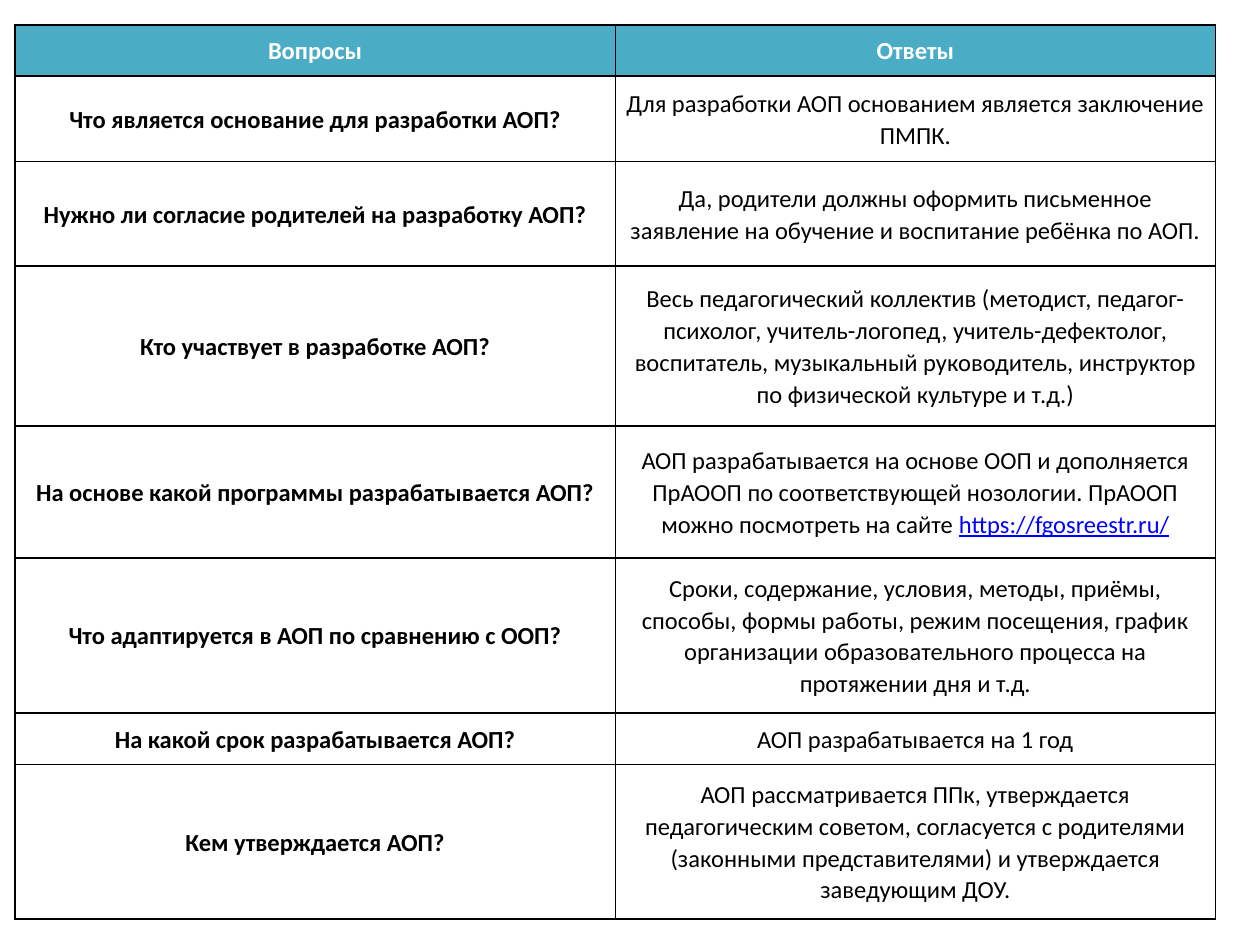
from lxml import etree
from pptx import Presentation
from pptx.dml.color import RGBColor
from pptx.enum import text
from pptx.oxml import ns
from pptx.util import Pt

HEADER = ("Вопросы", "Ответы")
LINK = "https://fgosreestr.ru/"
QUESTIONS = [
    ("Что является основание для разработки АОП?",
     "Для разработки АОП основанием является заключение ПМПК."),
    ("Нужно ли согласие родителей на разработку АОП?",
     "Да, родители должны оформить письменное заявление на обучение и воспитание ребёнка по АОП."),
    ("Кто участвует в разработке АОП?",
     "Весь педагогический коллектив (методист, педагог-психолог, учитель-логопед, "
     "учитель-дефектолог, воспитатель, музыкальный руководитель, инструктор "
     "по физической культуре и т.д.)"),
    ("На основе какой программы разрабатывается АОП?",
     "АОП разрабатывается на основе ООП и дополняется ПрАООП по соответствующей нозологии. "
     "ПрАООП можно посмотреть на сайте ", LINK),
    ("Что адаптируется в АОП по сравнению с ООП?",
     "Сроки, содержание, условия, методы, приёмы, способы, формы работы, режим посещения, "
     "график организации образовательного процесса на протяжении дня и т.д."),
    ("На какой срок разрабатывается АОП?",
     "АОП разрабатывается на 1 год"),
    ("Кем утверждается АОП?",
     "АОП рассматривается ППк, утверждается педагогическим советом, согласуется с родителями "
     "(законными представителями) и утверждается заведующим ДОУ."),
]
ROW_HEIGHTS = [29.3, 48.9, 59.7, 91.4, 75.5, 88.4, 29.4, 88.4]
LEFT, TOP, COLUMN_WIDTH = 8.6, 14.2, 343
MARGIN = 4.5
TEAL, WHITE, BLACK, BLUE = "4BACC6", "FFFFFF", "000000", "0000FF"


def color(value):
    return RGBColor.from_string(value)


def add_borders(cell):
    tc_pr = cell._tc.get_or_add_tcPr()
    for index, side in enumerate(("lnL", "lnR", "lnT", "lnB")):
        line = etree.Element(ns.qn(f"a:{side}"), w=str(Pt(1)))
        fill = etree.SubElement(line, ns.qn("a:solidFill"))
        etree.SubElement(fill, ns.qn("a:srgbClr"), val=BLACK)
        tc_pr.insert(index, line)


def fill_cell(cell, runs, bold, ink, background):
    cell.fill.solid()
    cell.fill.fore_color.rgb = color(background)
    add_borders(cell)
    cell.margin_left = cell.margin_right = Pt(MARGIN)
    cell.margin_top = cell.margin_bottom = Pt(MARGIN)
    cell.vertical_anchor = text.MSO_ANCHOR.MIDDLE
    p = cell.text_frame.paragraphs[0]
    p.alignment = text.PP_ALIGN.CENTER
    p.line_spacing = 1.07
    for content in runs:
        r = p.add_run()
        r.text = content
        r.font.name = "Calibri"
        r.font.size = Pt(14)
        r.font.bold = bold
        r.font.underline = content == LINK
        r.font.color.rgb = color(BLUE if content == LINK else ink)


prs = Presentation()
prs.slide_width, prs.slide_height = Pt(720), Pt(540)
s = prs.slides.add_slide(prs.slide_layouts[6])
table = s.shapes.add_table(
    len(ROW_HEIGHTS), len(HEADER), Pt(LEFT), Pt(TOP),
    Pt(COLUMN_WIDTH * len(HEADER)), Pt(sum(ROW_HEIGHTS))).table
table.horz_banding = False
for column in table.columns:
    column.width = Pt(COLUMN_WIDTH)
for row, height in zip(table.rows, ROW_HEIGHTS):
    row.height = Pt(height)

for column, title in enumerate(HEADER):
    fill_cell(table.cell(0, column), [title], True, WHITE, TEAL)
for row, (question, *answer) in enumerate(QUESTIONS, 1):
    fill_cell(table.cell(row, 0), [question], True, BLACK, WHITE)
    fill_cell(table.cell(row, 1), answer, False, BLACK, WHITE)

prs.save("out.pptx")
